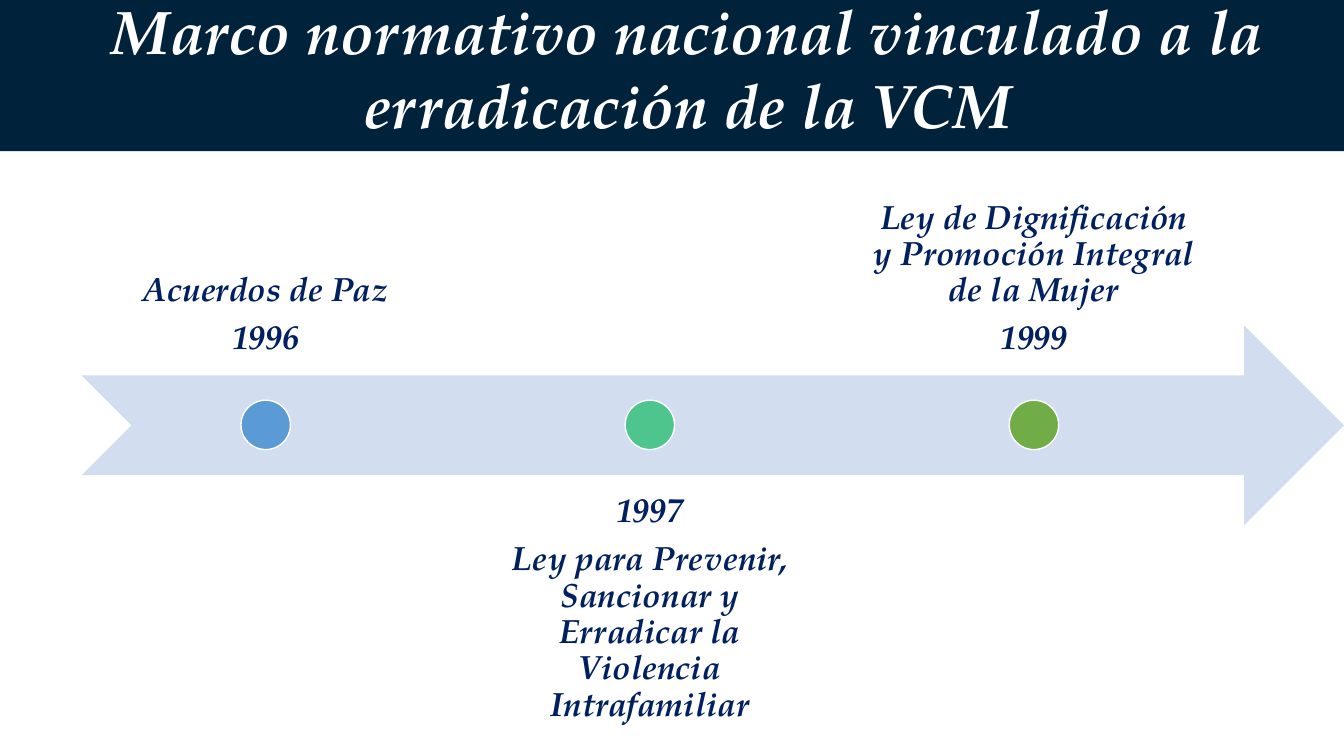
from dataclasses import dataclass

from pptx import Presentation
from pptx.dml.color import RGBColor
from pptx.enum.shapes import MSO_SHAPE
from pptx.enum.text import MSO_ANCHOR, MSO_AUTO_SIZE, PP_ALIGN
from pptx.util import Inches, Pt


@dataclass(frozen=True)
class Theme:
    font: str = "TeX Gyre Pagella"
    title_size: float = 44
    label_size: float = 24
    band: str = "00223B"
    arrow: str = "D2DEEF"
    label: str = "002060"
    white: str = "FFFFFF"


@dataclass(frozen=True)
class Milestone:
    lines: tuple[str, ...]
    color: str
    above: bool


THEME = Theme()
MILESTONES = (
    Milestone(("Acuerdos de Paz", "1996"), "5B9BD5", True),
    Milestone(
        ("1997", "Ley para Prevenir, Sancionar y Erradicar la Violencia Intrafamiliar"),
        "4DC58D",
        False,
    ),
    Milestone(
        ("Ley de Dignificación y Promoción Integral de la Mujer", "1999"),
        "70AD47",
        True,
    ),
)

# Timeline geometry in inches
FIRST_LEFT, STEP = 0.82, 3.81
LABEL_WIDTH, LABEL_HEIGHT = 3.63, 1.98
ABOVE_TOP, BELOW_TOP = 1.75, 4.71
DOT_SIZE, DOT_TOP = 0.49, 3.97


def add_filled_shape(slide, kind, left: float, top: float, width: float,
                     height: float, color: str, outline: str | None = None):
    shape = slide.shapes.add_shape(
        kind, Inches(left), Inches(top), Inches(width), Inches(height))
    shape.shadow.inherit = False
    shape.fill.solid()
    shape.fill.fore_color.rgb = RGBColor.from_string(color)
    if outline:
        shape.line.color.rgb = RGBColor.from_string(outline)
        shape.line.width = Pt(1)
    else:
        shape.line.fill.background()
    return shape


def write_text(shape, lines: tuple[str, ...], *, size: float, color: str,
               anchor, margins: tuple[float, float],
               line_spacing: float = 1.0, space_after: float = 0) -> None:
    frame = shape.text_frame
    frame.word_wrap = True
    frame.auto_size = MSO_AUTO_SIZE.NONE
    frame.vertical_anchor = anchor
    frame.margin_left = frame.margin_right = Inches(margins[0])
    frame.margin_top = frame.margin_bottom = Inches(margins[1])
    for index, line in enumerate(lines):
        paragraph = frame.add_paragraph() if index else frame.paragraphs[0]
        paragraph.alignment = PP_ALIGN.CENTER
        paragraph.line_spacing = line_spacing
        paragraph.space_before = Pt(0)
        paragraph.space_after = Pt(space_after)
        run = paragraph.add_run()
        run.text = line
        run.font.name = THEME.font
        run.font.size = Pt(size)
        run.font.bold = run.font.italic = True
        run.font.color.rgb = RGBColor.from_string(color)


def add_milestone(slide, milestone: Milestone, left: float) -> None:
    top = ABOVE_TOP if milestone.above else BELOW_TOP
    label = slide.shapes.add_textbox(
        Inches(left), Inches(top), Inches(LABEL_WIDTH), Inches(LABEL_HEIGHT))
    write_text(
        label, milestone.lines, size=THEME.label_size, color=THEME.label,
        anchor=MSO_ANCHOR.BOTTOM if milestone.above else MSO_ANCHOR.TOP,
        margins=(0.19, 0.19), line_spacing=0.9,
        space_after=0.35 * THEME.label_size)
    add_filled_shape(
        slide, MSO_SHAPE.OVAL, left + (LABEL_WIDTH - DOT_SIZE) / 2, DOT_TOP,
        DOT_SIZE, DOT_SIZE, milestone.color, THEME.white)


def add_title(slide) -> None:
    add_filled_shape(slide, MSO_SHAPE.RECTANGLE, 0, -0.02, 13.33, 1.52, THEME.band)
    title = slide.shapes.title
    title.left, title.top = Inches(0.63), Inches(0.26)
    title.width, title.height = Inches(12.39), Inches(0.81)
    write_text(
        title, ("Marco normativo nacional vinculado a la erradicación de la VCM",),
        size=THEME.title_size, color=THEME.white,
        anchor=MSO_ANCHOR.MIDDLE, margins=(0.1, 0.05))
    # Bring the title in front of its band
    slide.shapes.element.append(title.element)


def main() -> None:
    presentation = Presentation()
    presentation.slide_width = Inches(13.33)
    presentation.slide_height = Inches(7.5)
    slide = presentation.slides.add_slide(presentation.slide_layouts[5])

    # Timeline
    add_filled_shape(slide, MSO_SHAPE.NOTCHED_RIGHT_ARROW,
                     0.81, 3.23, 12.52, 1.98, THEME.arrow)
    for index, milestone in enumerate(MILESTONES):
        add_milestone(slide, milestone, FIRST_LEFT + index * STEP)

    # Heading
    add_title(slide)
    presentation.save("out.pptx")


if __name__ == "__main__":
    main()
